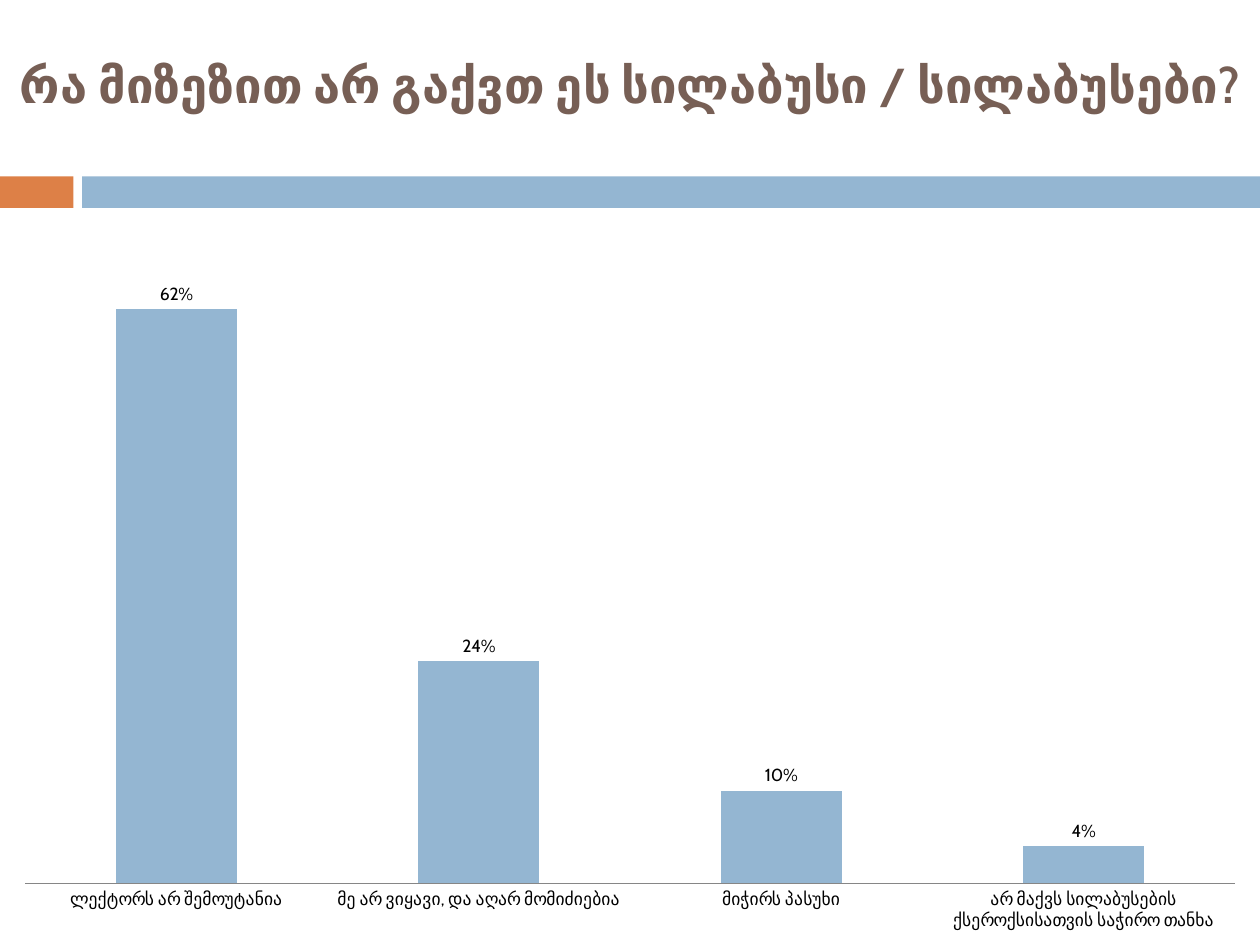
from pptx import Presentation
from pptx.chart.data import CategoryChartData
from pptx.dml.color import RGBColor
from pptx.enum import chart as ch, shapes, text
from pptx.util import Pt

FONT = "Cabin"
COLORS = {"title": "775F55", "accent": "DD8047", "bar": "94B6D2",
          "text": "000000", "axis": "868686"}
REASONS = {
    "ლექტორს არ შემოუტანია": 0.62,
    "მე არ ვიყავი, და აღარ მომიძიებია": 0.24,
    "მიჭირს პასუხი": 0.1,
    "არ მაქვს სილაბუსების ქსეროქსისათვის საჭირო თანხა": 0.04,
}


def rgb(name):
    return RGBColor.from_string(COLORS[name])


def add_text(s, txt, x, y, w, h, size, color, bold=False):
    tf = s.shapes.add_textbox(Pt(x), Pt(y), Pt(w), Pt(h)).text_frame
    tf.word_wrap = True
    tf.margin_left = tf.margin_right = 0
    tf.vertical_anchor = text.MSO_ANCHOR.MIDDLE
    p = tf.paragraphs[0]
    p.alignment = text.PP_ALIGN.CENTER
    r = p.add_run()
    r.text = txt
    r.font.name, r.font.size, r.font.bold = FONT, Pt(size), bold
    r.font.color.rgb = rgb(color)


def add_band(s, x, y, w, h):
    accent_w, gap = 42, 5
    start = accent_w + gap
    for left, width, color in ((x, accent_w, "accent"), (x + start, w - start, "bar")):
        sp = s.shapes.add_shape(shapes.MSO_SHAPE.RECTANGLE, Pt(left), Pt(y), Pt(width), Pt(h))
        sp.shadow.inherit = False
        sp.fill.solid()
        sp.fill.fore_color.rgb = rgb(color)
        sp.line.fill.background()


def add_reasons_chart(s, x, y, w, h):
    data = CategoryChartData(number_format="0%")
    data.categories = list(REASONS)
    data.add_series("Series 1", list(REASONS.values()))
    chart = s.shapes.add_chart(ch.XL_CHART_TYPE.COLUMN_CLUSTERED,
                               Pt(x), Pt(y), Pt(w), Pt(h), data).chart
    chart.has_title = chart.has_legend = False
    chart.font.name, chart.font.size = FONT, Pt(10)
    chart.font.color.rgb = rgb("text")

    axis = chart.category_axis
    axis.major_tick_mark = ch.XL_TICK_MARK.NONE
    axis.format.line.color.rgb = rgb("axis")
    axis.format.line.width = Pt(0.75)
    values = chart.value_axis
    values.minimum_scale, values.maximum_scale = 0, 0.7
    values.has_major_gridlines = False
    values.visible = False

    plot = chart.plots[0]
    plot.vary_by_categories = False
    plot.gap_width, plot.overlap = 150, -25
    fill = plot.series[0].format.fill
    fill.solid()
    fill.fore_color.rgb = rgb("bar")
    plot.has_data_labels = True
    labels = plot.data_labels
    labels.show_value = True
    labels.number_format, labels.number_format_is_linked = "0%", False
    labels.position = ch.XL_LABEL_POSITION.OUTSIDE_END


def main():
    prs = Presentation()
    prs.slide_width, prs.slide_height = Pt(720), Pt(540)
    s = prs.slides.add_slide(prs.slide_layouts[6])
    add_band(s, 0, 100.8, 720, 18)
    add_text(s, "რა მიზეზით არ გაქვთ ეს სილაბუსი / სილაბუსები?",
             0, 0, 720, 96, size=28, color="title", bold=True)
    add_reasons_chart(s, 0, 126, 720, 414)
    prs.save("out.pptx")


if __name__ == "__main__":
    main()
